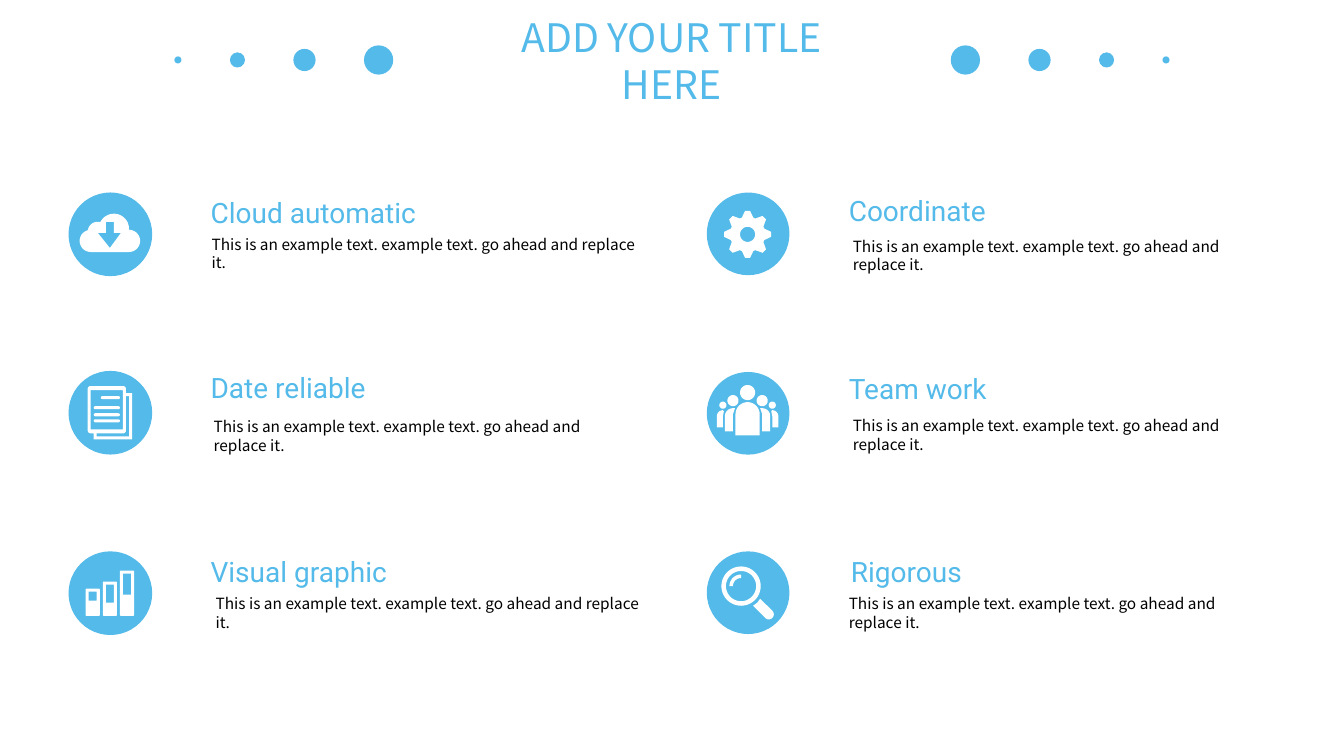
from dataclasses import dataclass
from math import cos, radians, sin

from pptx import Presentation
from pptx.dml.color import RGBColor
from pptx.enum.shapes import MSO_SHAPE
from pptx.enum.text import MSO_ANCHOR, MSO_AUTO_SIZE, PP_ALIGN
from pptx.shapes.autoshape import Shape
from pptx.slide import Slide
from pptx.util import Inches, Pt

SKY = RGBColor(0x53, 0xBA, 0xE9)
WHITE = RGBColor(0xFF, 0xFF, 0xFF)
BLACK = RGBColor(0x00, 0x00, 0x00)
OVAL, PILL = MSO_SHAPE.OVAL, MSO_SHAPE.ROUNDED_RECTANGLE
LEFT, CENTER = PP_ALIGN.LEFT, PP_ALIGN.CENTER
TOP, MIDDLE = MSO_ANCHOR.TOP, MSO_ANCHOR.MIDDLE
FIT_SHAPE = MSO_AUTO_SIZE.SHAPE_TO_FIT_TEXT
BODY_FONT, HEADING_FONT = "Noto Sans CJK SC", "Roboto"
EXAMPLE = "This is an example text. example text. go ahead and replace it."

SLIDE_WIDTH = 13.33
DOT_MIDDLE = 0.595

Point = tuple[float, float]
Contour = list[Point]


@dataclass(frozen=True)
class Dot:
    center: float
    size: float


@dataclass(frozen=True)
class Feature:
    heading: str
    heading_at: Point
    body_at: Point
    body_width: float
    badge_at: Point
    badge_size: float


DOTS = [Dot(3.755, 0.29), Dot(3.02, 0.22), Dot(2.355, 0.15), Dot(1.765, 0.07)]

FEATURES = [
    Feature("Cloud automatic", (1.99, 1.89), (2, 2.28), 4.47, (0.68, 1.91), 0.83),
    Feature("Visual graphic", (1.99, 5.45), (2.04, 5.85), 4.44, (0.68, 5.47), 0.83),
    Feature("Date reliable", (1.99, 3.63), (2.02, 4.09), 4.32, (0.68, 3.68), 0.83),
    Feature("Coordinate", (8.32, 1.87), (8.36, 2.3), 4.3, (7.01, 1.91), 0.82),
    Feature("Team work", (8.32, 3.64), (8.36, 4.08), 4.3, (7.01, 3.69), 0.82),
    Feature("Rigorous", (8.34, 5.45), (8.32, 5.85), 4.3, (7.01, 5.47), 0.82),
]


def arc(x: float, y: float, radius: float, start: float, end: float) -> Contour:
    """Points along an arc; angles in degrees, clockwise from the right."""
    steps = max(6, round(abs(end - start) / 8))
    angles = [radians(start + (end - start) * i / steps) for i in range(steps + 1)]
    return [(x + radius * cos(a), y + radius * sin(a)) for a in angles]


def circle(x: float, y: float, radius: float) -> Contour:
    return arc(x, y, radius, 0, 360)


def rectangle(left: float, top: float, right: float, bottom: float,
              radius: float = 0) -> Contour:
    if not radius:
        return [(left, top), (right, top), (right, bottom), (left, bottom)]
    west, east = left + radius, right - radius
    north, south = top + radius, bottom - radius
    return (arc(west, north, radius, 180, 270) + arc(east, north, radius, 270, 360)
            + arc(east, south, radius, 0, 90) + arc(west, south, radius, 90, 180))


def mirror(contour: Contour, axis: float) -> Contour:
    return [(2 * axis - x, y) for x, y in contour]


def paint(shape: Shape, color: RGBColor) -> None:
    shape.shadow.inherit = False
    shape.fill.solid()
    shape.fill.fore_color.rgb = color
    shape.line.fill.background()


def add_preset(page: Slide, kind: MSO_SHAPE, left: float, top: float, width: float,
               height: float, color: RGBColor) -> Shape:
    shape = page.shapes.add_shape(
        kind, Inches(left), Inches(top), Inches(width), Inches(height))
    paint(shape, color)
    return shape


def add_outline(page: Slide, *contours: Contour) -> None:
    """Draw one white freeform; a contour inside another is a hole."""
    first, *others = [[(Inches(x), Inches(y)) for x, y in c] for c in contours]
    builder = page.shapes.build_freeform(*first[0])
    builder.add_line_segments(first[1:], close=True)
    for vertices in others:
        builder.move_to(*vertices[0])
        builder.add_line_segments(vertices[1:], close=True)
    paint(builder.convert_to_shape(), WHITE)


def add_text(page: Slide, text: str, left: float, top: float, width: float,
             height: float, *, size: float, font: str, color: RGBColor,
             align: PP_ALIGN = LEFT, anchor: MSO_ANCHOR = TOP) -> None:
    box = page.shapes.add_textbox(
        Inches(left), Inches(top), Inches(width), Inches(height))
    frame = box.text_frame
    frame.word_wrap = True
    frame.auto_size = FIT_SHAPE
    frame.vertical_anchor = anchor
    para = frame.paragraphs[0]
    para.alignment = align
    span = para.add_run()
    span.text = text
    span.font.size = Pt(size)
    span.font.name = font
    span.font.color.rgb = color


def add_dots(page: Slide) -> None:
    for dot in DOTS:
        for center in (dot.center, SLIDE_WIDTH - dot.center):
            add_preset(page, OVAL, center - dot.size / 2, DOT_MIDDLE - dot.size / 2,
                       dot.size, dot.size, SKY)


def add_feature(page: Slide, feature: Feature) -> None:
    add_text(page, feature.heading, *feature.heading_at, 2.37, 0.44,
             size=20, font=HEADING_FONT, color=SKY)
    add_text(page, EXAMPLE, *feature.body_at, feature.body_width, 0.47,
             size=11, font=BODY_FONT, color=BLACK)
    add_preset(page, OVAL, *feature.badge_at, feature.badge_size,
               feature.badge_size, SKY)


def add_cloud(page: Slide) -> None:
    cloud = (arc(1.13, 2.27, 0.15, 0, -153) + arc(0.97, 2.3, 0.1, -79, -168)
             + arc(0.9, 2.39, 0.11, -105, -270) + arc(1.28, 2.39, 0.11, 90, -90))
    arrow = [(1.09, 2.46), (0.97, 2.31), (1.05, 2.31), (1.05, 2.2),
             (1.13, 2.2), (1.13, 2.31), (1.2, 2.31)]
    add_outline(page, cloud, arrow)


def add_bars(page: Slide) -> None:
    for i, (top, window_bottom) in enumerate([(5.84, 5.96), (5.77, 5.98), (5.66, 5.9)]):
        left = 0.85 + 0.17 * i
        add_outline(page, rectangle(left, top, left + 0.14, 6.11, 0.01),
                    rectangle(left + 0.03, top + 0.03, left + 0.11, window_bottom))


def add_document(page: Slide) -> None:
    back_sheet = [(1.25, 3.9), (1.31, 3.9), (1.31, 4.36), (0.93, 4.36), (0.93, 4.3),
                  (0.96, 4.3), (0.96, 4.33), (1.28, 4.33), (1.28, 3.93), (1.25, 3.93)]
    add_outline(page, rectangle(0.87, 3.83, 1.25, 4.3, 0.03),
                rectangle(0.9, 3.87, 1.22, 4.26), back_sheet)
    for left, top in [(1, 3.93), (0.93, 4.03), (0.93, 4.1), (0.93, 4.16)]:
        text_line = add_preset(page, PILL, left, top, 1.19 - left, 0.03, WHITE)
        text_line.adjustments[0] = 0.5


def add_gear(page: Slide) -> None:
    x, y = 7.415, 2.325
    tooth = [(-19, 0.175), (-6, 0.235), (6, 0.235), (19, 0.175)]
    rim = [(x + radius * cos(radians(turn + angle)), y + radius * sin(radians(turn + angle)))
           for turn in range(0, 360, 45) for angle, radius in tooth]
    add_outline(page, rim, circle(x, y, 0.075))


def add_team(page: Slide) -> None:
    axis = 7.415
    leader = [(7.295, 4.32), *arc(axis, 4.11, 0.12, 180, 360), (7.535, 4.32)]
    neighbor = [(7.27, 4.28), (7.19, 4.28), *arc(7.27, 4.13, 0.08, 180, 270),
                (7.29, 4.05), (7.27, 4.11)]
    outsider = [(7.17, 4.24), (7.11, 4.24), *arc(7.17, 4.13, 0.06, 180, 270),
                (7.18, 4.08), (7.17, 4.13)]
    side = [neighbor, outsider, circle(7.27, 3.975, 0.055), circle(7.17, 4.02, 0.035)]
    add_outline(page, leader, circle(axis, 3.895, 0.075), *side,
                *[mirror(contour, axis) for contour in side])


def add_magnifier(page: Slide) -> None:
    x, y = 7.35, 5.815
    add_outline(page, [(7.54, 5.94), (7.51, 5.98), (7.47, 6.01),
                       *arc(7.625, 6.095, 0.05, 135, -45)])
    add_outline(page, circle(x, y, 0.195), circle(x, y, 0.15))
    add_outline(page, arc(x, y, 0.115, 180, 270) + arc(x, y, 0.08, 270, 180))


def main() -> None:
    deck = Presentation()
    deck.slide_width, deck.slide_height = Inches(SLIDE_WIDTH), Inches(7.5)
    page = deck.slides.add_slide(deck.slide_layouts[6])
    add_dots(page)
    add_text(page, "ADD YOUR TITLE HERE", 4.57, 0.31, 4.18, 0.57, size=28,
             font=BODY_FONT, color=SKY, align=CENTER, anchor=MIDDLE)
    icons = [add_cloud, add_bars, add_document, add_gear, add_team, add_magnifier]
    for feature, add_icon in zip(FEATURES, icons):
        add_feature(page, feature)
        add_icon(page)
    deck.save("out.pptx")


if __name__ == "__main__":
    main()
